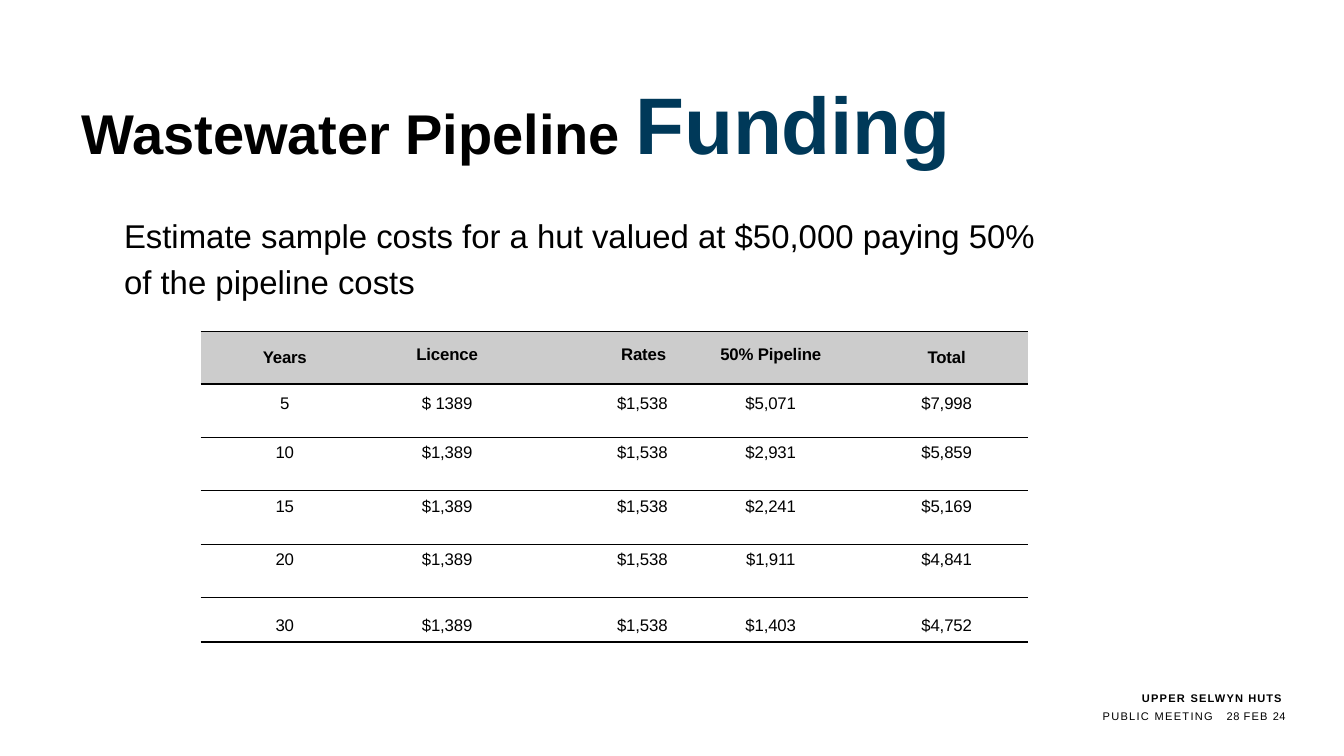
from lxml.etree import SubElement
from pptx import Presentation
from pptx.dml.color import RGBColor
from pptx.enum.text import PP_ALIGN
from pptx.oxml import parse_xml
from pptx.oxml.ns import nsdecls, qn
from pptx.util import Inches, Pt

COLUMN_WIDTHS = [1.53, 1.73, 1.46, 1.87, 1.62]
ROW_HEIGHTS = [0.52, 0.53, 0.53, 0.53, 0.53, 0.44]
ROW_INSETS = [0.13, 0.1, 0.06, 0.06, 0.06, 0.06]
COLUMN_INDENTS = [0.14, 0.1, 0.87, 0, 0]
COSTS = [
    ["Years", "Licence", "Rates", "50% Pipeline", "Total"],
    ["5", "$ 1389", "$1,538", "$5,071", "$7,998"],
    ["10", "$1,389", "$1,538", "$2,931", "$5,859"],
    ["15", "$1,389", "$1,538", "$2,241", "$5,169"],
    ["20", "$1,389", "$1,538", "$1,911", "$4,841"],
    ["30", "$1,389", "$1,538", "$1,403", "$4,752"],
]


def rgb(value):
    """Turn a hex string into a colour."""
    return RGBColor.from_string(value)


def set_font(font, size, bold=False, color="000000"):
    """Set the face, size, weight and colour of a font."""
    font.name, font.size, font.bold = "Arial", Pt(size), bold
    font.color.rgb = rgb(color)


def add_run(p, text, spacing=0):
    """Add a run with letter spacing in points."""
    r = p.add_run()
    r.text = text
    if spacing:
        r.font._element.set("spc", str(round(spacing * 100)))
    return r


def set_indent(p, indent):
    """Set the left margin of a paragraph in inches."""
    p._p.get_or_add_pPr().set("marL", str(Inches(indent)))


def add_tab(p, position):
    """Add a left tab stop to a paragraph."""
    tabs = SubElement(p._p.get_or_add_pPr(), qn("a:tabLst"))
    SubElement(tabs, qn("a:tab"), pos=str(Inches(position)), algn="l")


def add_text(s, left, top, width, height, inset=0):
    """Add a wrapping text box and return its frame."""
    sp = s.shapes.add_textbox(Inches(left), Inches(top), Inches(width), Inches(height))
    tf = sp.text_frame
    tf.word_wrap = True
    tf.margin_left = tf.margin_right = tf.margin_bottom = 0
    tf.margin_top = Inches(inset)
    return tf


def add_title(s):
    """Add the two-tone title."""
    p = add_text(s, 0.8, 0.72, 11.95, 0.98, 0.15).paragraphs[0]
    set_indent(p, 0.01)
    p.line_spacing, p.space_before = Pt(58.9), Pt(10.9)
    for text, spacing in [("Waste", 0), ("w", -2.2), ("ater ", -0.1), ("Pipeline ", 0)]:
        set_font(add_run(p, text, spacing).font, 40, True)
    set_font(add_run(p, "Funding", -0.1).font, 57.3, True, "003959")


def add_intro(s):
    """Add the two lines above the table."""
    tf = add_text(s, 1.22, 2.13, 12.11, 0.86, 0.01)
    lines = ["Estimate sample costs for a hut valued at $50,000 paying 50%", "of the pipeline costs"]
    for i, line in enumerate(lines):
        p = tf.add_paragraph() if i else tf.paragraphs[0]
        set_indent(p, 0.01)
        p.space_before = Pt(4.5)
        set_font(p.font, 23.5)
        add_run(p, line)


def add_footer(s):
    """Add the meeting name and date."""
    tf = add_text(s, 10.87, 6.86, 1.88, 0.31)
    name, date = tf.paragraphs[0], tf.add_paragraph()
    name.line_spacing = Pt(9.4)
    date.line_spacing, date.space_before = Pt(9.4), Pt(3.5)
    add_tab(date, 1.23)
    for p, bold in [(name, True), (date, False)]:
        p.alignment = PP_ALIGN.RIGHT
        set_font(p.font, 7.9, bold)
    for text, spacing in [("UPPER ", 0.9), ("SELWYN ", 0.8), ("HUTS ", 0.7)]:
        add_run(name, text, spacing)
    for text, spacing in [("PUBLIC MEETING\t", 0.9), ("28 ", 0.4), ("FEB ", 0.8), ("24", 0.3)]:
        add_run(date, text, spacing)


def set_borders(cell):
    """Rule a cell above and below only."""
    black = '<a:solidFill><a:srgbClr val="000000"/></a:solidFill>'
    sides = [("lnL", "<a:noFill/>"), ("lnR", "<a:noFill/>"), ("lnT", black), ("lnB", black)]
    tcPr = cell._tc.get_or_add_tcPr()
    for i, (side, fill) in enumerate(sides):
        tcPr.insert(i, parse_xml(f'<a:{side} {nsdecls("a")} w="12700">{fill}</a:{side}>'))


def fill_cell(cell, text, row, col):
    """Write and format one cell of the cost table."""
    header, last = row == 0, row == len(COSTS) - 1
    cell.margin_left = cell.margin_right = cell.margin_bottom = 0
    outer = header and col in (0, len(COLUMN_WIDTHS) - 1)
    cell.margin_top = Inches(0.16 if outer else ROW_INSETS[row])
    if header:
        cell.fill.solid()
        cell.fill.fore_color.rgb = rgb("CCCCCC")
    else:
        cell.fill.background()
    set_borders(cell)
    p = cell.text_frame.paragraphs[0]
    rates = col == 2
    p.alignment = PP_ALIGN.LEFT if rates else PP_ALIGN.CENTER
    set_indent(p, 0.91 if header and rates else COLUMN_INDENTS[col])
    if last:
        p.line_spacing = Pt(22.7)
    set_font(p.font, 12, header)
    add_run(p, text, -0.1 if col else -0.2)


def add_cost_table(s):
    """Add the table of yearly costs."""
    frame = s.shapes.add_table(len(COSTS), len(COLUMN_WIDTHS), Inches(1.99), Inches(3.29),
                               Inches(sum(COLUMN_WIDTHS)), Inches(sum(ROW_HEIGHTS)))
    table = frame.table
    table.first_row = table.horz_banding = False
    for column, width in zip(table.columns, COLUMN_WIDTHS):
        column.width = Inches(width)
    for row, height in enumerate(ROW_HEIGHTS):
        table.rows[row].height = Inches(height)
        for col, text in enumerate(COSTS[row]):
            fill_cell(table.cell(row, col), text, row, col)


def main():
    """Build the slide and save it."""
    prs = Presentation()
    prs.slide_width, prs.slide_height = Inches(13.33), Inches(7.5)
    s = prs.slides.add_slide(prs.slide_layouts[6])
    add_footer(s)
    add_title(s)
    add_cost_table(s)
    add_intro(s)
    prs.save("out.pptx")


if __name__ == "__main__":
    main()
